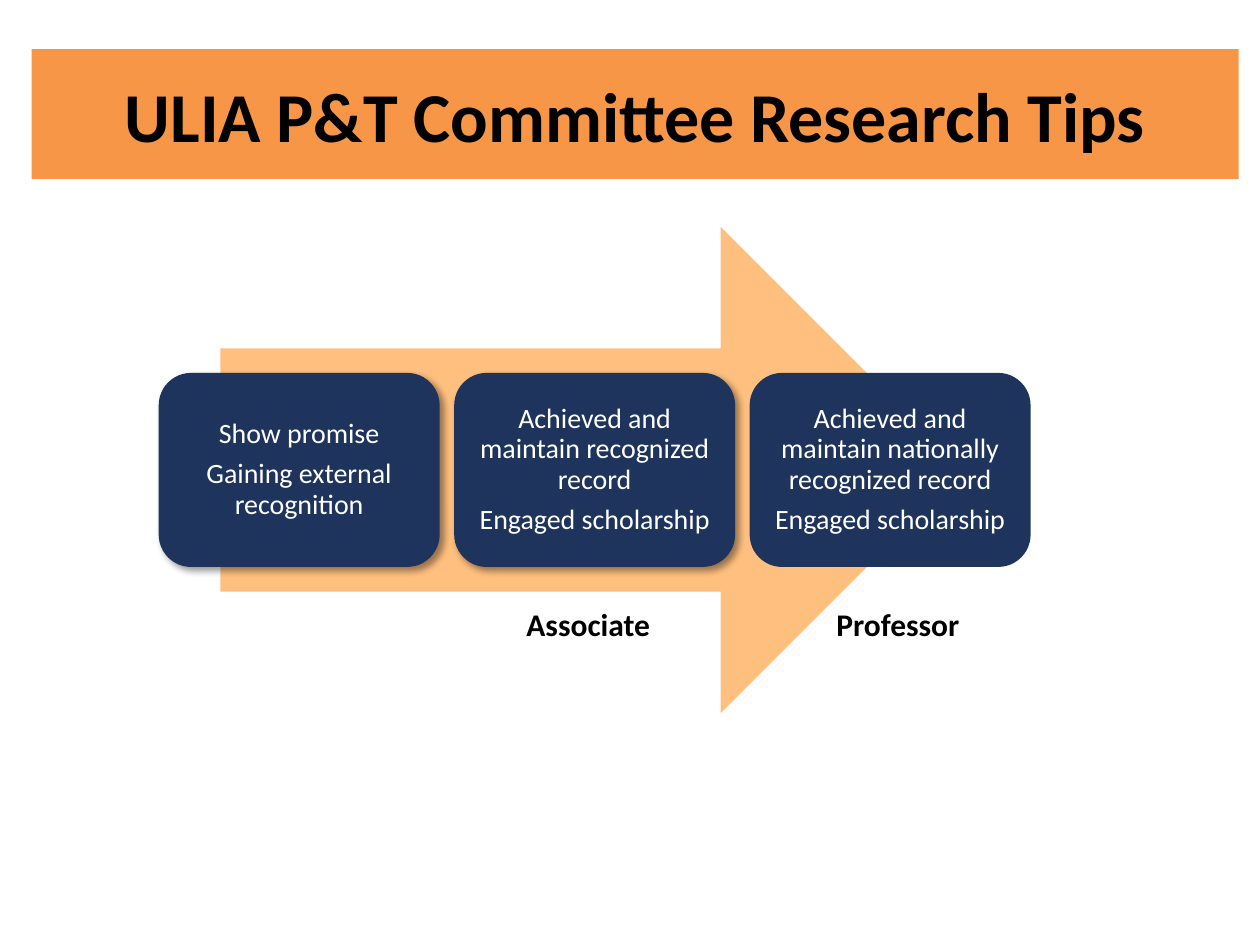
from dataclasses import dataclass

from lxml.etree import SubElement
from pptx import Presentation
from pptx.dml.color import RGBColor
from pptx.enum.shapes import MSO_SHAPE as Preset
from pptx.enum.text import MSO_ANCHOR as Anchor, MSO_AUTO_SIZE as AutoSize, PP_ALIGN as Align
from pptx.oxml import parse_xml
from pptx.oxml.ns import nsdecls, qn
from pptx.shapes.autoshape import Shape
from pptx.slide import Slide
from pptx.util import Inches, Pt


@dataclass(frozen=True)
class Theme:
    font: str = "Calibri"
    banner: RGBColor = RGBColor(0xF7, 0x96, 0x46)
    arrow: RGBColor = RGBColor(0xFF, 0x83, 0x00)
    card: RGBColor = RGBColor(0x1E, 0x34, 0x5D)
    light: RGBColor = RGBColor(0xFF, 0xFF, 0xFF)
    dark: RGBColor = RGBColor(0x00, 0x00, 0x00)
    title_size: int = 40
    label_size: int = 18
    card_size: int = 16


@dataclass(frozen=True)
class Stage:
    tips: tuple[str, ...]
    shadow: bool


@dataclass(frozen=True)
class RankLabel:
    text: str
    left: float


THEME = Theme()
TITLE = "ULIA P&T Committee Research Tips"
STAGES = (
    Stage(("Show promise", "Gaining external recognition"), True),
    Stage(("Achieved and maintain recognized record", "Engaged scholarship"), True),
    Stage(("Achieved and maintain nationally recognized record", "Engaged scholarship"), False),
)
RANK_LABELS = (RankLabel("Associate", 4.08), RankLabel("Professor", 6.54))
FIRST_CARD_LEFT, CARD_TOP = 1.26, 2.96
CARD_WIDTH, CARD_HEIGHT, CARD_PITCH = 2.23, 1.54, 2.345
CARD_INSET = Inches(0.07)


def style_paragraph(paragraph, size: int, color: RGBColor, bold: bool, align: Align) -> None:
    paragraph.alignment = align
    paragraph.font.name = THEME.font
    paragraph.font.size = Pt(size)
    paragraph.font.bold = bold
    paragraph.font.color.rgb = color


def paint(shape: Shape, color: RGBColor) -> None:
    shape.fill.solid()
    shape.fill.fore_color.rgb = color
    shape.line.fill.background()


def add_soft_shadow(shape: Shape) -> None:
    effects = shape._element.spPr.find(qn("a:effectLst"))
    effects.append(parse_xml(
        f'<a:outerShdw {nsdecls("a")} blurRad="{Pt(4)}" dist="{Pt(3)}" dir="2700000" rotWithShape="0">'
        '<a:srgbClr val="000000"><a:alpha val="40000"/></a:srgbClr></a:outerShdw>'
    ))


def fill_title(slide: Slide) -> None:
    """Turn the title placeholder into the bevelled banner."""
    title = slide.shapes.title
    title.left, title.top = Inches(0.25), Inches(0.39)
    title.width, title.height = Inches(9.58), Inches(1.03)
    title._element.spPr.append(parse_xml(
        f'<a:prstGeom {nsdecls("a")} prst="bevel"><a:avLst/></a:prstGeom>'
    ))
    paint(title, THEME.banner)
    frame = title.text_frame
    frame.text = TITLE
    frame.auto_size = AutoSize.NONE
    frame.vertical_anchor = Anchor.MIDDLE
    style_paragraph(frame.paragraphs[0], THEME.title_size, THEME.dark, True, Align.CENTER)


def add_arrow(slide: Slide) -> None:
    arrow = slide.shapes.add_shape(
        Preset.RIGHT_ARROW, Inches(1.75), Inches(1.8), Inches(5.9), Inches(3.86)
    )
    arrow.shadow.inherit = False
    paint(arrow, THEME.arrow)
    color = arrow._element.spPr.find(qn("a:solidFill")).find(qn("a:srgbClr"))
    SubElement(color, qn("a:alpha"), val="50000")


def add_card(slide: Slide, stage: Stage, left: float) -> None:
    card = slide.shapes.add_shape(
        Preset.ROUNDED_RECTANGLE,
        Inches(left), Inches(CARD_TOP), Inches(CARD_WIDTH), Inches(CARD_HEIGHT),
    )
    card.shadow.inherit = False
    paint(card, THEME.card)
    if stage.shadow:
        add_soft_shadow(card)
    frame = card.text_frame
    frame.text = "\n".join(stage.tips)
    frame.word_wrap = True
    frame.vertical_anchor = Anchor.MIDDLE
    frame.margin_left = frame.margin_right = CARD_INSET
    frame.margin_top = frame.margin_bottom = CARD_INSET
    for paragraph in frame.paragraphs:
        style_paragraph(paragraph, THEME.card_size, THEME.light, False, Align.CENTER)
        paragraph.line_spacing = 0.9
        paragraph.space_after = Pt(0.35 * THEME.card_size)


def add_rank_label(slide: Slide, label: RankLabel) -> None:
    box = slide.shapes.add_textbox(Inches(label.left), Inches(4.75), Inches(2.33), Inches(0.4))
    frame = box.text_frame
    frame.text = label.text
    frame.word_wrap = True
    frame.auto_size = AutoSize.SHAPE_TO_FIT_TEXT
    style_paragraph(frame.paragraphs[0], THEME.label_size, THEME.dark, True, Align.LEFT)


def main() -> None:
    presentation = Presentation()
    presentation.slide_width, presentation.slide_height = Inches(10), Inches(7.5)
    slide = presentation.slides.add_slide(presentation.slide_layouts.get_by_name("Title Only"))
    fill_title(slide)
    add_arrow(slide)
    for position, stage in enumerate(STAGES):
        add_card(slide, stage, FIRST_CARD_LEFT + position * CARD_PITCH)
    for label in RANK_LABELS:
        add_rank_label(slide, label)
    presentation.save("out.pptx")


if __name__ == "__main__":
    main()
